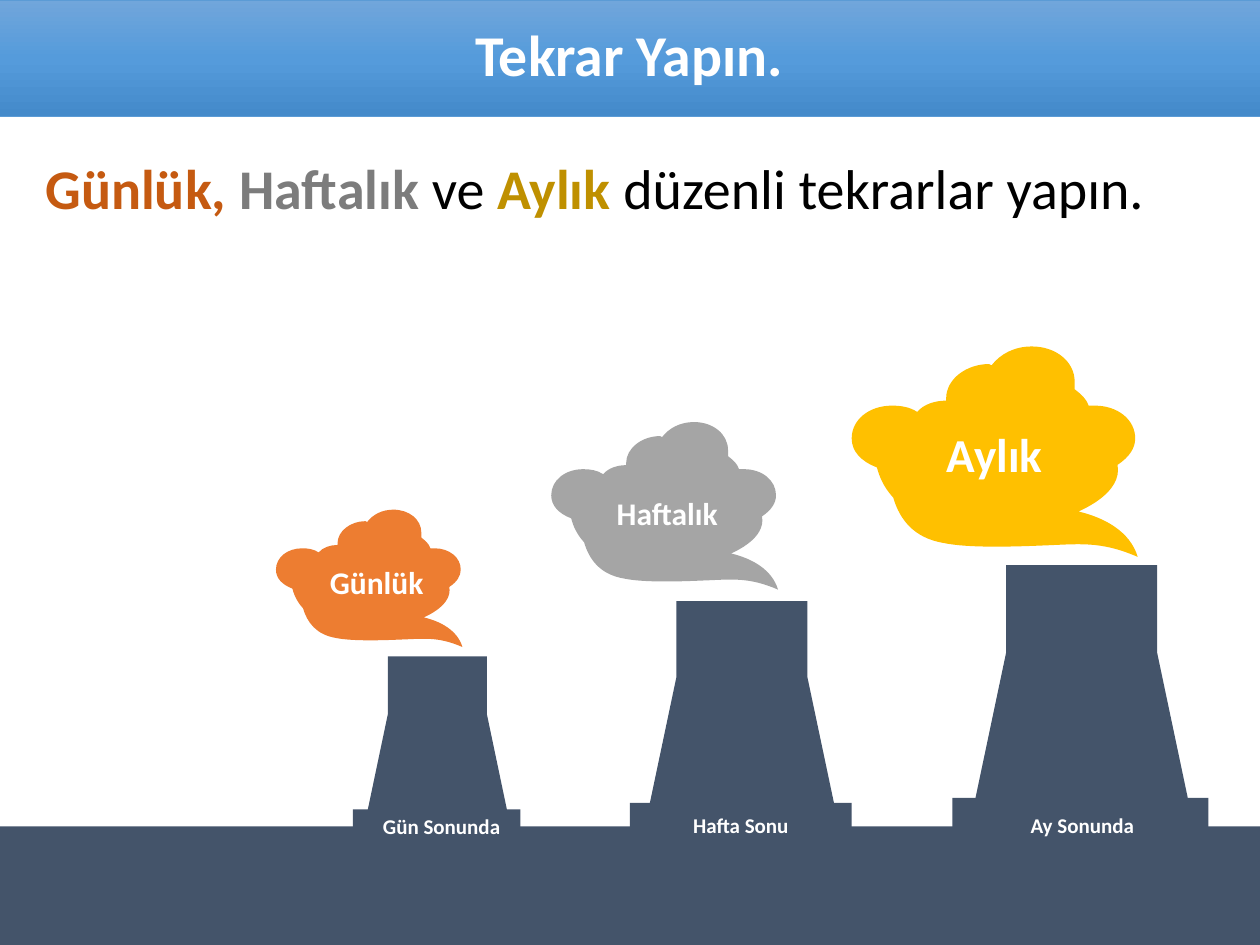
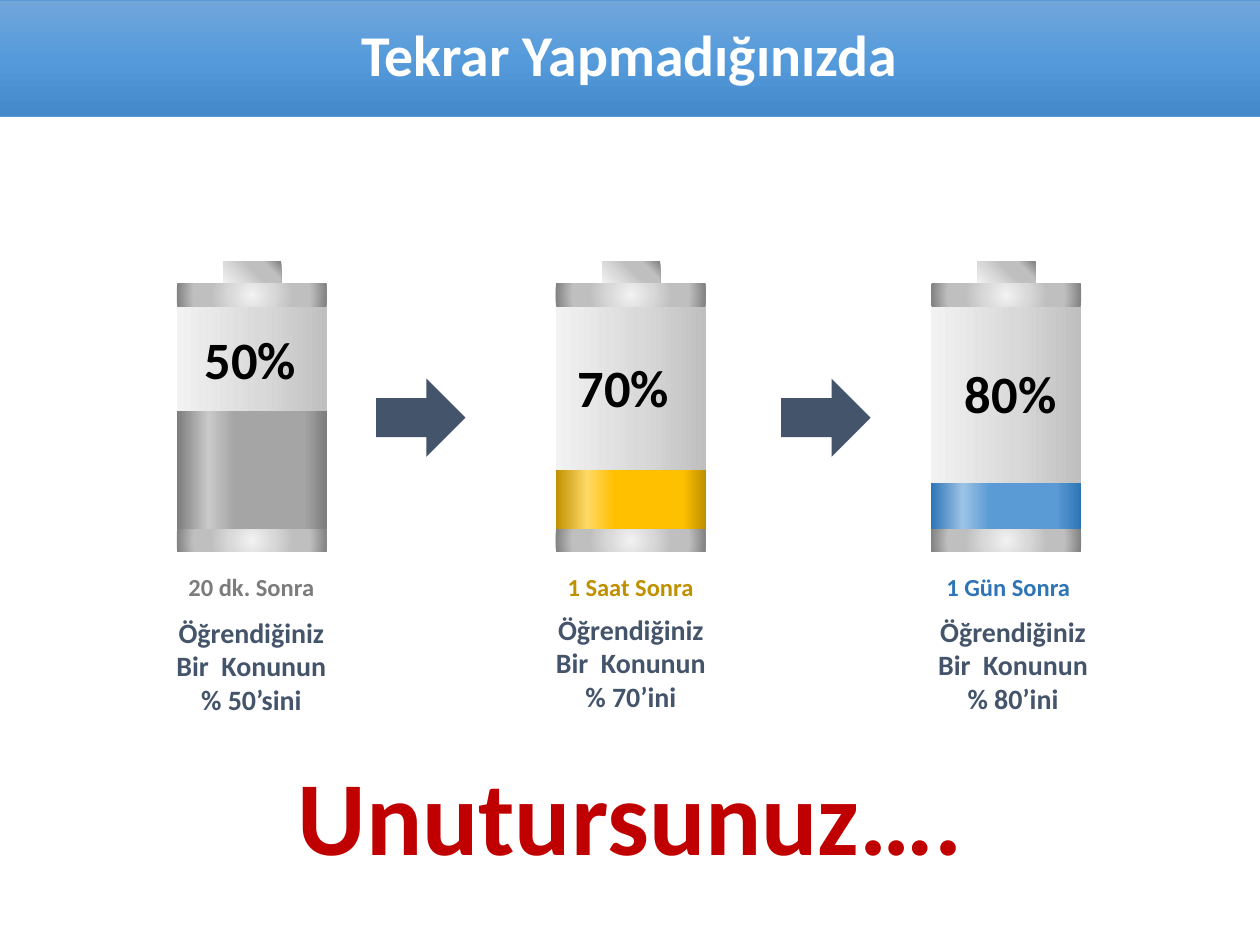
"""Build two slides on revision: study rhythm as chimneys, forgetting as batteries."""
from lxml import etree
from pptx import Presentation
from pptx.dml.color import RGBColor
from pptx.enum.shapes import MSO_SHAPE
from pptx.enum.text import MSO_ANCHOR, PP_ALIGN
from pptx.oxml.ns import qn
from pptx.util import Inches, Pt

RECTANGLE, ARROW = MSO_SHAPE.RECTANGLE, MSO_SHAPE.RIGHT_ARROW
LEFT, CENTER, MIDDLE = PP_ALIGN.LEFT, PP_ALIGN.CENTER, MSO_ANCHOR.MIDDLE
FONT = "Calibri"
COLUMNS, ROWS = 100, 75
CELL = Inches(10) // COLUMNS

WHITE, BLACK, NAVY, RED = "FFFFFF", "000000", "44546A", "C00000"
ORANGE, GRAY, GOLD, BLUE = "ED7D31", "A5A5A5", "FFC000", "5B9BD5"
DARK_ORANGE, DARK_GRAY, DARK_GOLD, DARK_BLUE = "C55A11", "7C7C7C", "BF9000", "2E75B6"
BAND = [(0, "71A6DB"), (50, "559BDB"), (100, "448ACA")]
GLASS = [(0, "F2F2F2"), (57, "D9D9D9"), (100, "BFBFBF")]
METAL = [(0, "F2F2F2"), (29, "D9D9D9"), (55, "BFBFBF"), (77, "BFBFBF"), (100, "808080")]
BOTTOM_LEFT, MIDPOINT = (0, 100, 100, 0), (50, 50, 50, 50)


def draw(shapes, kind, box, fill, angle=0, focus=None):
    """Draw a preset, or an outline of lines and curves in shares of its box, and fill it."""
    left, top, width, height = [round(value * CELL) for value in box]
    if isinstance(kind, list):
        points = [(left + part[-2] * width, top + part[-1] * height) for part in kind]
        builder = shapes.build_freeform(*points[0])
        builder.add_line_segments(points[1:])
        shape = builder.convert_to_shape()
        segments = list(shape.element.iter(qn("a:lnTo")))
        for segment, part in zip(segments, kind[1:]):
            if len(part) == 6:
                segment.tag = qn("a:cubicBezTo")
                for index in (0, 1):
                    x, y = part[2 * index:2 * index + 2]
                    control = etree.Element(
                        qn("a:pt"), x=str(round(x * width)), y=str(round(y * height)))
                    segment.insert(index, control)
    else:
        shape = shapes.add_shape(kind, left, top, width, height)
    shape.shadow.inherit = False
    shape.line.fill.background()
    if isinstance(fill, str):
        shape.fill.solid()
        shape.fill.fore_color.rgb = RGBColor.from_string(fill)
        return shape
    shape.fill.gradient()
    gradient = shape.element.spPr.find(qn("a:gradFill"))
    gradient.clear()
    stops = etree.SubElement(gradient, qn("a:gsLst"))
    for position, color in fill:
        stop = etree.SubElement(stops, qn("a:gs"), pos=str(position * 1000))
        etree.SubElement(stop, qn("a:srgbClr"), val=color)
    if focus:
        circle = etree.SubElement(gradient, qn("a:path"), path="circle")
        sides = {side: str(share * 1000) for side, share in zip("ltrb", focus)}
        etree.SubElement(circle, qn("a:fillToRect"), **sides)
    else:
        etree.SubElement(gradient, qn("a:lin"), ang=str(angle * 60000), scaled="0")
    return shape


def write(shape, size, runs, align=CENTER, wrap=False):
    """Write (text, colour, bold) runs as one paragraph of the shape."""
    shape.text_frame.word_wrap = wrap
    paragraph = shape.text_frame.paragraphs[0]
    paragraph.alignment = align
    paragraph.font.name, paragraph.font.size = FONT, Pt(size)
    for text, color, bold in runs:
        run = paragraph.add_run()
        run.text = text
        run.font.bold = bold
        run.font.color.rgb = RGBColor.from_string(color)
    return paragraph


presentation = Presentation()
presentation.slide_width = COLUMNS * CELL
presentation.slide_height = ROWS * CELL
for title in ("Tekrar Yapın.", "Tekrar Yapmadığınızda"):
    slide = presentation.slides.add_slide(presentation.slide_layouts[6])
    band = draw(slide.shapes, RECTANGLE, (-0.1, 0, COLUMNS + 0.1, 9.25), BAND, angle=90)
    band.line.color.rgb = RGBColor.from_string(BLUE)
    band.line.width = Pt(0.5)
    band.text_frame.vertical_anchor = MIDDLE
    write(band, 33, [(title, WHITE, True)], wrap=True).line_spacing = 0.9
rhythm, forgetting = [slide.shapes for slide in presentation.slides]

TOWER = [(1, 0.88), (0.92, 0.88), (0.8, 0.33), (0.8, 0), (0.21, 0), (0.21, 0.33),
         (0.09, 0.88), (0, 0.88), (0, 1), (1, 1)]
CLOUD_SIZE = (227, 167)
CLOUD_PARTS = [
    (180, 131),
    (184, 129, 215, 116, 211, 94), (220, 88, 225, 81, 225, 73),
    (225, 58, 211, 47, 193, 47), (191, 47, 190, 47, 188, 47),
    (186, 41, 182, 38, 177, 34), (177, 32, 177, 30, 177, 28),
    (177, 12, 162, 0, 143, 0), (129, 0, 118, 6, 111, 15),
    (111, 15, 109, 14, 109, 14), (91, 14, 75, 26, 75, 41),
    (75, 41, 75, 41, 75, 43), (66, 43, 57, 46, 52, 52),
    (46, 48, 39, 47, 32, 47), (14, 47, 0, 58, 0, 73),
    (0, 83, 7, 91, 20, 96), (21, 99, 23, 109, 33, 120),
    (38, 137, 49, 152, 73, 156), (92, 160, 127, 159, 151, 158),
    (180, 157, 197, 154, 227, 167), (221, 147, 201, 136, 180, 131),
]
CLOUD = [[value / CLOUD_SIZE[index % 2] for index, value in enumerate(part)]
         for part in CLOUD_PARTS]

GROUND = 65.6
draw(rhythm, RECTANGLE, (0, GROUND, COLUMNS, ROWS - GROUND), NAVY)
chimneys = [
    ((28, 52.1, 13.3, 13.8), (21.9, 40.45, 14.8, 10.9), ORANGE,
     "Günlük", 18, (24.65, 44.2, 10.5, 4), "Gün Sonunda", (28.8, 64.1, 12.5, 3)),
    ((50, 47.7, 17.6, 18.2), (43.75, 33.5, 18, 13.3), GRAY,
     "Haftalık", 18, (47, 38.75, 11.9, 4), "Hafta Sonu", (53.3, 64, 11, 3)),
    ((75.6, 44.85, 20.3, 21), (67.6, 27.5, 22.7, 16.7), GOLD,
     "Aylık", 27, (73.3, 33.3, 11.3, 5.6), "Ay Sonunda", (80.15, 64, 11.5, 3)),
]
for tower_box, cloud_box, color, period, size, period_box, moment, moment_box in chimneys:
    draw(rhythm, TOWER, tower_box, NAVY)
    draw(rhythm, CLOUD, cloud_box, color)
    for text, points, box in ((period, size, period_box), (moment, 12, moment_box)):
        label = rhythm.add_textbox(*[round(value * CELL) for value in box])
        write(label, points, [(text, WHITE, True)])

statement = rhythm.add_textbox(*[round(value * CELL) for value in (2.63, 11.7, 93.6, 11.8)])
write(statement, 32, [
    ("Günlük, ", DARK_ORANGE, True), ("Haftalık", DARK_GRAY, True), (" ve ", BLACK, False),
    ("Aylık", DARK_GOLD, True), (" düzenli tekrarlar yapın.", BLACK, False),
], LEFT, wrap=True)

BATTERY_WIDTH, BATTERY_TOP, BATTERY_BOTTOM, CAP = 11.9, 22.5, 43.8, 1.8
FILL_BOTTOM = BATTERY_BOTTOM - CAP
batteries = [
    (14.03, 32.6, (DARK_GRAY, "C9C9C9", GRAY), 85, "50%", (15.25, 25.5),
     "20 dk. Sonra", 13.2, "% 50’sini", (12.4, 48.35)),
    (44.1, 37.3, (DARK_GOLD, "FFD966", GOLD), 85, "70%", (44.85, 27.7),
     "1 Saat Sonra", 43.3, "% 70’ini", (42.52, 48.1)),
    (73.9, 38.3, (DARK_BLUE, "9DC3E6", BLUE), 83, "80%", (75.6, 28.15),
     "1 Gün Sonra", 73.27, "% 80’ini", (72.85, 48.25)),
]
for left, level, tones, edge, percent, percent_at, delay, delay_left, share, share_at in batteries:
    dark, light, main = tones
    shell = forgetting.add_group_shape().shapes
    draw(shell, RECTANGLE, (left, BATTERY_TOP, BATTERY_WIDTH, BATTERY_BOTTOM - BATTERY_TOP), GLASS)
    draw(shell, RECTANGLE, (left + 3.7, 20.75, 4.6, 1.75), METAL, focus=BOTTOM_LEFT)
    for top in (BATTERY_TOP, FILL_BOTTOM):
        draw(shell, RECTANGLE, (left, top, BATTERY_WIDTH, CAP), METAL, focus=MIDPOINT)
    draw(forgetting, RECTANGLE, (left, level, BATTERY_WIDTH, FILL_BOTTOM - level),
         [(0, dark), (21, light), (39, main), (edge, main), (100, dark)])
    for text, size, color, box, align, wrap in (
        (percent, 30, BLACK, (*percent_at, 9.4, 6.1), LEFT, False),
        (delay, 14, dark, (delay_left, 44.9, 13.5, 3.4), CENTER, False),
        (f"Öğrendiğiniz Bir  Konunun {share}", 16, NAVY, (*share_at, 15.1, 9.1), CENTER, True),
    ):
        label = forgetting.add_textbox(*[round(value * CELL) for value in box])
        write(label, size, [(text, color, True)], align, wrap)

for left in (29.85, 62):
    draw(forgetting, ARROW, (left, 30.05, 7.1, 6.2), NAVY)
verdict = forgetting.add_textbox(*[round(value * CELL) for value in (22.63, 59.1, 68.9, 11.1)])
write(verdict, 60, [("Unutursunuz….", RED, True)], LEFT, wrap=True)

presentation.save("out.pptx")
